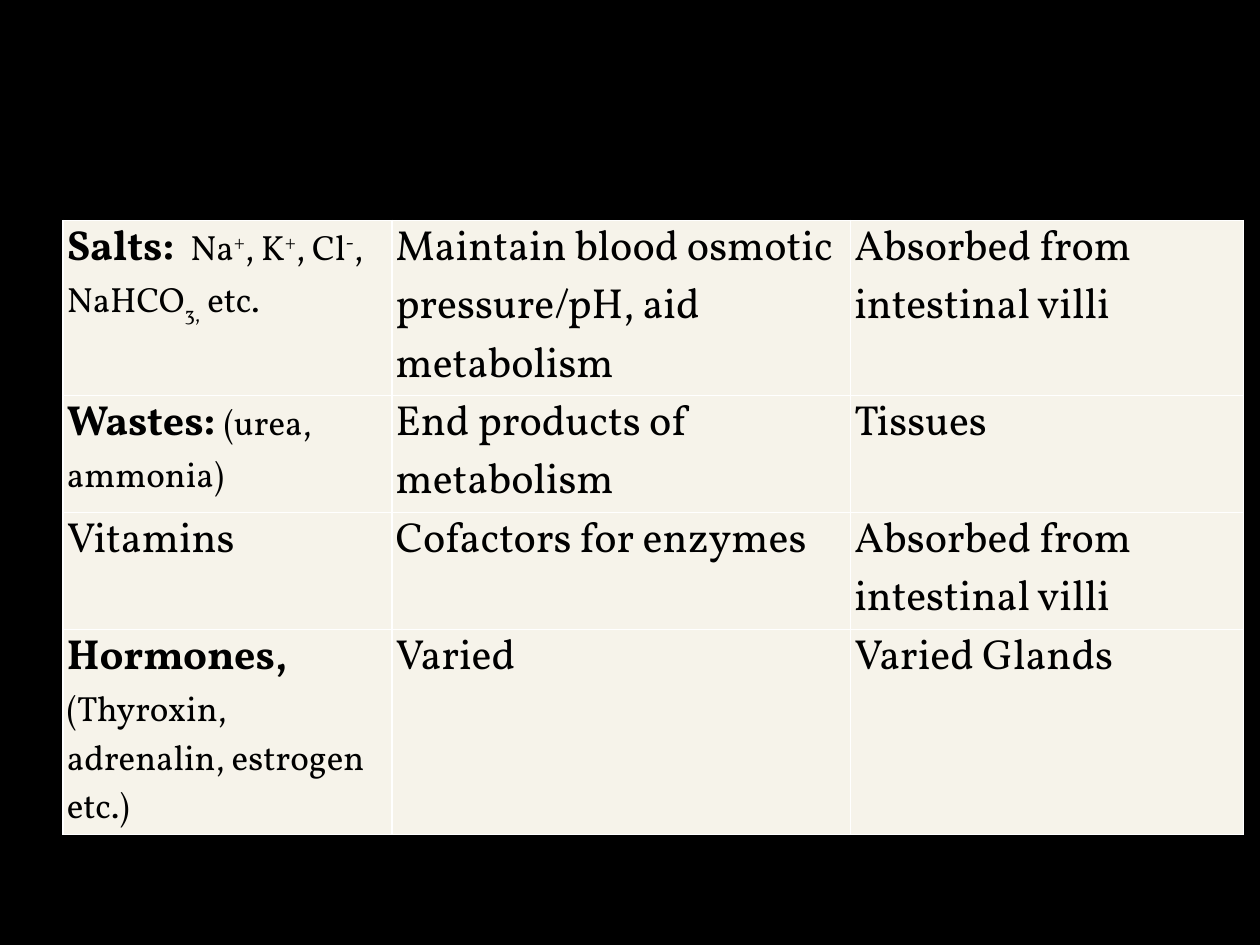
from dataclasses import dataclass

from lxml.etree import SubElement
from pptx import Presentation
from pptx.dml.color import RGBColor as RGB
from pptx.oxml.ns import qn
from pptx.util import Pt


@dataclass(frozen=True)
class Theme:
    font: str = "Vollkorn"
    back: str = "000000"
    cell: str = "F6F3EA"
    ink: str = "000000"
    rule: str = "FFFFFF"
    line: float = 1
    main: float = 24
    note: float = 20


THEME = Theme()

# Run styles: size, bold, extra character attributes
STYLES = {
    "main": (THEME.main, False, {}),
    "head": (THEME.main, True, {}),
    "wide": (THEME.note, False, {"spc": "500"}),
    "note": (THEME.note, False, {}),
    "sup": (THEME.note, False, {"baseline": "30000"}),
    "sub": (THEME.note, False, {"baseline": "-25000"}),
}

# First column: paragraphs made of (text, style) runs
SALTS = [[
    ("Salts:", "head"), (" ", "wide"), ("Na", "note"), ("+", "sup"),
    (", K", "note"), ("+", "sup"), (", Cl", "note"), ("-", "sup"),
    (", NaHCO", "note"), ("3,", "sub"), (" etc.", "note"),
]]
WASTES = [
    [("Wastes:", "head"), (" ", "main"), ("(urea,", "note")],
    [("ammonia)", "note")],
]
HORMONES = [
    [("Hormones,", "head")],
    [("(Thyroxin, adrenalin, estrogen", "note")],
    [("etc.)", "note")],
]
VILLI = "Absorbed from intestinal villi"
ROWS = [
    (SALTS, "Maintain blood osmotic pressure/pH, aid metabolism", VILLI),
    (WASTES, "End products of metabolism", "Tissues"),
    ("Vitamins", "Cofactors for enzymes", VILLI),
    (HORMONES, "Varied", "Varied Glands"),
]
BOX = (36, 126, 674.6, 302.4)
WIDTHS = (187.9, 262.1, 224.6)
HEIGHTS = (45, 27, 27, 45)


def write(frame, paras):
    """Fill a text frame from a plain string or from paragraphs of runs."""
    if isinstance(paras, str):
        paras = [[(paras, "main")]]
    for i, runs in enumerate(paras):
        para = frame.add_paragraph() if i else frame.paragraphs[0]
        for text, style in runs:
            size, bold, extra = STYLES[style]
            run = para.add_run()
            run.text = text
            look = {"name": THEME.font, "size": Pt(size), "bold": bold}
            for key, value in look.items():
                setattr(run.font, key, value)
            run.font.color.rgb = RGB.from_string(THEME.ink)
            for key, value in extra.items():
                run.font._element.set(key, value)


def border(cell):
    props = cell._tc.get_or_add_tcPr()
    for i, side in enumerate(("lnL", "lnR", "lnT", "lnB")):
        line = SubElement(props, qn(f"a:{side}"), w=str(Pt(THEME.line)))
        fill = SubElement(line, qn("a:solidFill"))
        SubElement(fill, qn("a:srgbClr"), val=THEME.rule)
        props.remove(line)
        props.insert(i, line)


def add_grid(slide, box):
    """Place the table of blood substances, their roles and sources."""
    frame = slide.shapes.add_table(len(ROWS), len(WIDTHS), *map(Pt, box))
    table = frame.table
    table.first_row = table.horz_banding = False
    for col, width in zip(table.columns, WIDTHS):
        col.width = Pt(width)
    for row, height, texts in zip(table.rows, HEIGHTS, ROWS):
        row.height = Pt(height)
        for cell, text in zip(row.cells, texts):
            pads = {"left": 2.2, "right": 2.2, "top": 0, "bottom": 0}
            for side, pad in pads.items():
                setattr(cell, f"margin_{side}", Pt(pad))
            cell.fill.solid()
            cell.fill.fore_color.rgb = RGB.from_string(THEME.cell)
            border(cell)
            write(cell.text_frame, text)


def main():
    deck = Presentation()
    deck.slide_width, deck.slide_height = Pt(720), Pt(540)
    slide = deck.slides.add_slide(deck.slide_layouts[6])
    fill = slide.background.fill
    fill.solid()
    fill.fore_color.rgb = RGB.from_string(THEME.back)
    add_grid(slide, BOX)
    deck.save("out.pptx")


if __name__ == "__main__":
    main()
